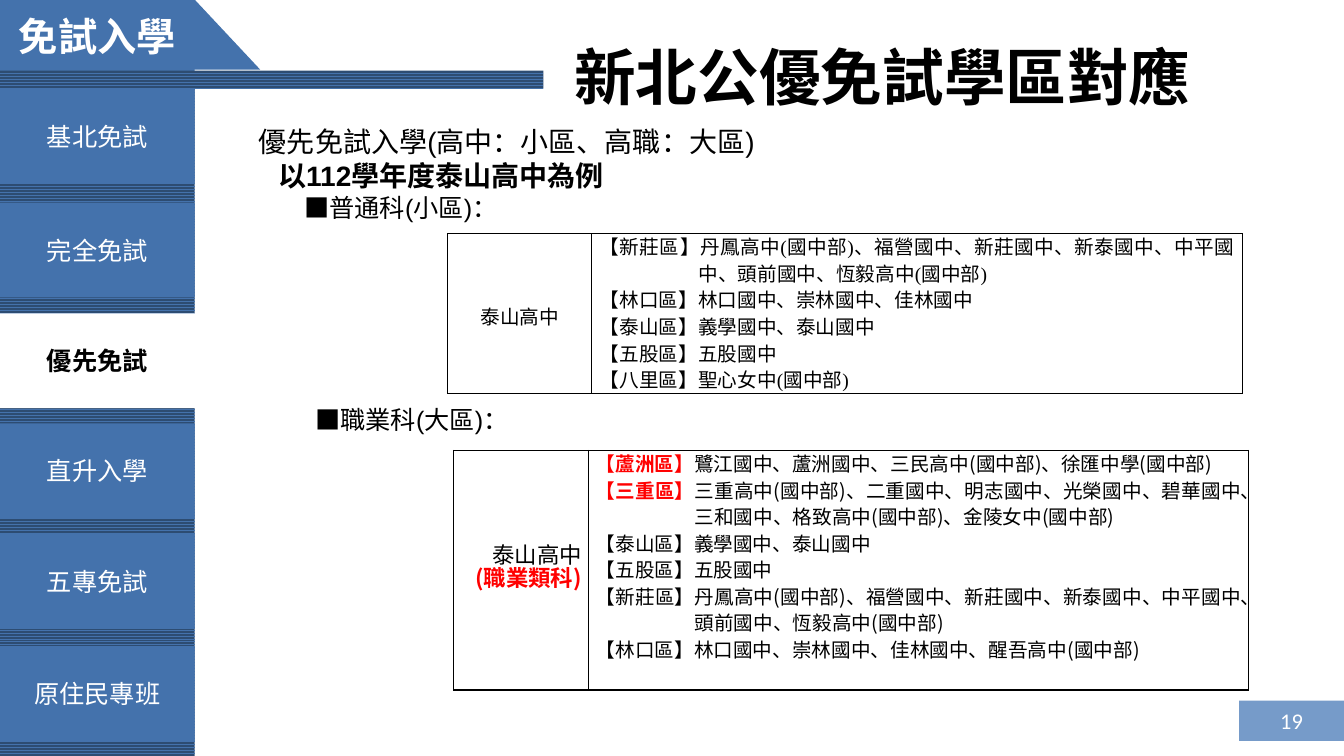
"""Build the slide on matching school districts for exam-free admission."""
from lxml.etree import SubElement
from pptx import Presentation
from pptx.dml.color import RGBColor
from pptx.enum.dml import MSO_PATTERN
from pptx.enum.shapes import MSO_SHAPE as Geo
from pptx.enum.text import MSO_ANCHOR as Anchor, PP_ALIGN as Align
from pptx.oxml.ns import qn
from pptx.util import Inches, Pt

BLUE, NAVY, SKY = "4472AC", "2D4C72", "769BC9"
WHITE, BLACK, RED = "FFFFFF", "000000", "FF0000"
SIDE = 1.93
TABS = [
    ("基北免試", 0.88), ("完全免試", 2.01), ("優先免試", 3.11),
    ("直升入學", 4.2), ("五專免試", 5.3), ("原住民專班", 6.41),
]
ACTIVE = "優先免試"
INTRO = [
    ("優先免試入學(高中：小區、高職：大區)", 20, False, 0, 0),
    ("以112學年度泰山高中為例", 20, True, 0.19, 0),
    ("■普通科(小區)：", 18, False, 0.45, 0),
    ("■職業科(大區)：", 18, False, 0.56, 130),
]
GENERAL = {
    "box": (4.44, 2.32, 1.57), "cols": (1.43, 6.45), "pad": 0.08,
    "font": "Times New Roman",
    "name": [("泰山高中", BLACK)], "style": (14, Align.CENTER, 24),
    "areas": [
        ("新莊區", "丹鳳高中(國中部)、福營國中、新莊國中、新泰國中、中平國中、頭前國中、恆毅高中(國中部)", 0.98),
        ("林口區", "林口國中、崇林國中、佳林國中", 0.83),
        ("泰山區", "義學國中、泰山國中", 0.83),
        ("五股區", "五股國中", 0.83),
        ("八里區", "聖心女中(國中部)", 0.83),
    ],
    "new": (),
}
TRADE = {
    "box": (4.5, 4.47, 2.28), "cols": (1.34, 6.54), "pad": 0.07,
    "font": "Noto Sans CJK SC",
    "name": [("泰山高中", BLACK), ("(職業類科)", RED)],
    "style": (16, Align.RIGHT, 16),
    "areas": [
        ("蘆洲區", "鷺江國中、蘆洲國中、三民高中(國中部)、徐匯中學(國中部)", 0.83),
        ("三重區", "三重高中(國中部)、二重國中、明志國中、光榮國中、碧華國中、三和國中、格致高中(國中部)、金陵女中(國中部)", 0.98),
        ("泰山區", "義學國中、泰山國中", 0.83),
        ("五股區", "五股國中", 0.83),
        ("新莊區", "丹鳳高中(國中部)、福營國中、新莊國中、新泰國中、中平國中、頭前國中、恆毅高中(國中部)", 0.98),
        ("林口區", "林口國中、崇林國中、佳林國中、醒吾高中(國中部)", 0.83),
    ],
    "new": ("蘆洲區", "三重區"),
}


def paint(item, color):
    if hasattr(item, "solid"):
        item.solid()
        item = item.fore_color
    item.rgb = RGBColor.from_string(color)


def style(font, size, color, bold=False, name="Calibri"):
    font.size, font.bold, font.name = Pt(size), bold, name
    paint(font.color, color)


def block(slide, box, color, geo=Geo.RECTANGLE):
    shape = slide.shapes.add_shape(geo, *map(Inches, box))
    shape.shadow.inherit = False
    shape.line.fill.background()
    paint(shape.fill, color)
    return shape


def stripe(slide, box):
    fill = block(slide, box, BLUE).fill
    fill.patterned()
    fill.pattern = MSO_PATTERN.ZIG_ZAG
    paint(fill.fore_color, BLUE)
    paint(fill.back_color, NAVY)


def label(shape, text, size, color, bold=False):
    frame = shape.text_frame
    frame.word_wrap, frame.vertical_anchor = True, Anchor.MIDDLE
    para = frame.paragraphs[0]
    para.text, para.alignment = text, Align.CENTER
    style(para.font, size, color, bold)
    return frame


def indent(para, left, first=0):
    props = para._p.get_or_add_pPr()
    props.set("marL", str(Inches(left)))
    props.set("indent", str(Inches(first)))


def lines(frame, count):
    return [frame.paragraphs[0]] + [frame.add_paragraph() for _ in range(count - 1)]


def border(cell):
    props = cell._tc.get_or_add_tcPr()
    for side in ("lnL", "lnR", "lnT", "lnB"):
        line = SubElement(props, qn("a:" + side), w=str(Pt(1)))
        fill = SubElement(line, qn("a:solidFill"))
        SubElement(fill, qn("a:srgbClr"), val=BLACK)


def grid(slide, data):
    left, top, high = data["box"]
    box = (left, top, sum(data["cols"]), high)
    table = slide.shapes.add_table(1, 2, *map(Inches, box)).table
    table.first_row = table.horz_banding = False
    for col, wide in zip(table.columns, data["cols"]):
        col.width = Inches(wide)
    school, zone = table.rows[0].cells
    for cell in (school, zone):
        border(cell)
        cell.fill.background()
        cell.margin_left = cell.margin_right = Inches(data["pad"])
        cell.margin_top = cell.margin_bottom = 0
    school.vertical_anchor = Anchor.MIDDLE
    size, align, pitch = data["style"]
    names, areas = data["name"], data["areas"]
    for para, (text, color) in zip(lines(school.text_frame, len(names)), names):
        para.text, para.alignment, para.line_spacing = text, align, Pt(pitch)
        style(para.font, size, color, color == RED, data["font"])
    for para, (area, text, hang) in zip(lines(zone.text_frame, len(areas)), areas):
        para.alignment, para.line_spacing = Align.JUSTIFY, Pt(19)
        indent(para, hang, -hang)
        style(para.font, 14, BLACK, False, data["font"])
        head, body = para.add_run(), para.add_run()
        head.text, body.text = f"【{area}】", text
        if area in data["new"]:
            style(head.font, 14, RED, True, data["font"])


def main():
    deck = Presentation()
    deck.slide_width, deck.slide_height = Inches(13.33), Inches(7.5)
    slide = deck.slides.add_slide(deck.slide_layouts[6])

    block(slide, (1.27, -0.01, 1.31, 0.7), BLUE, Geo.ISOSCELES_TRIANGLE)
    label(block(slide, (0, -0.01, SIDE, 0.74), BLUE), "免試入學", 28, WHITE, True)
    stripe(slide, (0, 0.86, SIDE, 6.64))
    stripe(slide, (0, 0.7, 5.39, 0.18))
    label(block(slide, (12.29, 6.95, 1.04, 0.4), SKY), "19", 16, WHITE)
    for text, top in TABS:
        on = text == ACTIVE
        extra = 0.18 if on else 0
        tab = block(slide, (0, top, SIDE + extra, 0.94), WHITE if on else BLUE)
        frame = label(tab, text, 18, BLACK if on else WHITE, on)
        frame.margin_right = Inches(0.1 + extra)

    title = slide.shapes.add_textbox(*map(Inches, (5.18, 0.38, 7.15, 0.74)))
    label(title, "新北公優免試學區對應", 44, BLACK, True)

    intro = slide.shapes.add_textbox(*map(Inches, (2.47, 1.19, 8.67, 3.2))).text_frame
    intro.word_wrap = True
    for para, (text, size, bold, left, gap) in zip(lines(intro, len(INTRO)), INTRO):
        para.text, para.space_before = text, Pt(gap)
        indent(para, left)
        style(para.font, size, BLACK, bold, "Arial")

    grid(slide, GENERAL)
    grid(slide, TRADE)
    deck.save("out.pptx")


if __name__ == "__main__":
    main()
